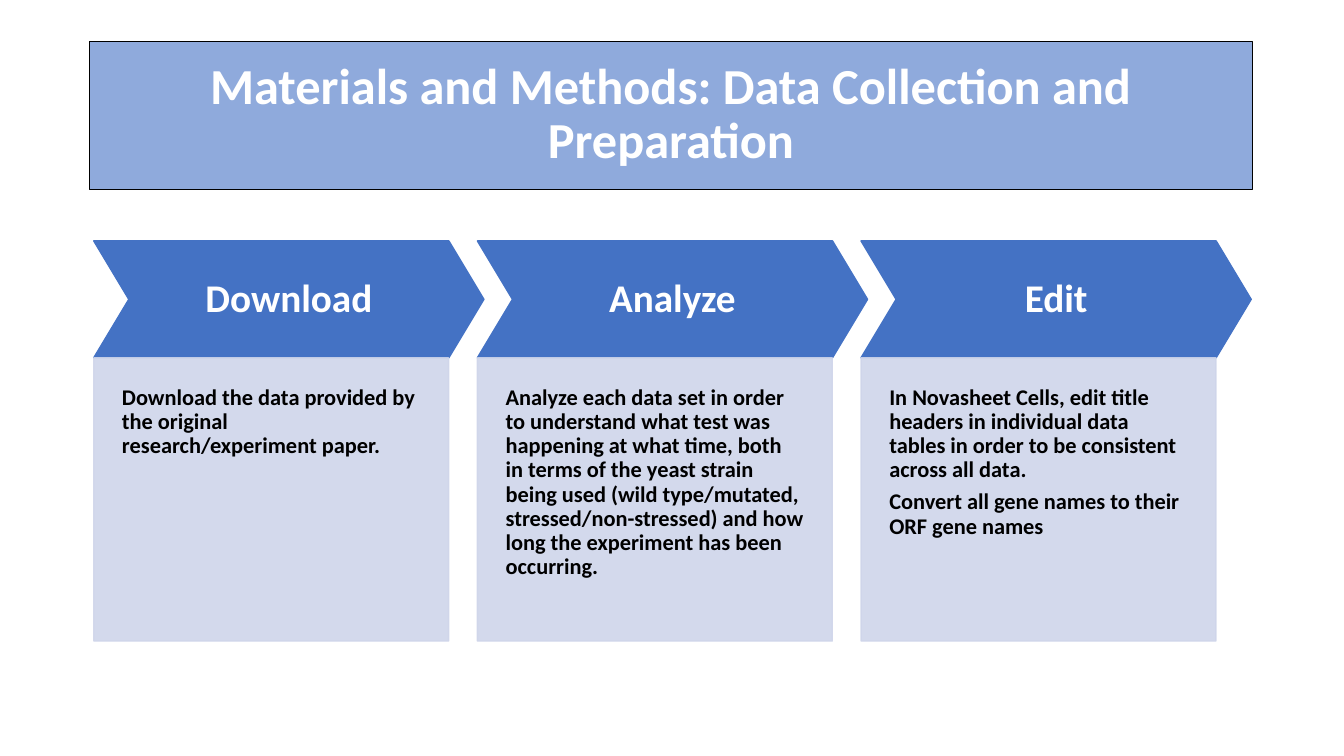
from lxml import etree
from pptx import Presentation
from pptx.dml.color import RGBColor
from pptx.enum.shapes import MSO_SHAPE
from pptx.enum.text import MSO_ANCHOR, PP_ALIGN
from pptx.oxml.ns import qn
from pptx.util import Inches, Pt

RECT, CHEVRON = MSO_SHAPE.RECTANGLE, MSO_SHAPE.CHEVRON
LEFT, CENTER = PP_ALIGN.LEFT, PP_ALIGN.CENTER
TOP, MIDDLE = MSO_ANCHOR.TOP, MSO_ANCHOR.MIDDLE

FONT = "Calibri"
STEP_LEFT, STEP_PITCH = 0.93, 3.805
CHEVRON_TOP, CHEVRON_W, CHEVRON_H = 2.39, 3.87, 1.16
PANEL_W, PANEL_H = 3.52, 2.81

STEPS = [
    ("Download",
     ["Download the data provided by the original research/experiment paper."]),
    ("Analyze",
     ["Analyze each data set in order to understand what test was happening at "
      "what time, both in terms of the yeast strain being used (wild "
      "type/mutated, stressed/non-stressed) and how long the experiment has "
      "been occurring."]),
    ("Edit",
     ["In Novasheet Cells, edit title headers in individual data tables in "
      "order to be consistent across all data.",
      "Convert all gene names to their ORF gene names"]),
]


def rgb(color):
    return RGBColor.from_string(color)


def add_box(s, kind, box, fill, line, width):
    sp = s.shapes.add_shape(kind, *map(Inches, box))
    sp.shadow.inherit = False
    sp.fill.solid()
    sp.fill.fore_color.rgb = rgb(fill)
    sp.line.color.rgb = rgb(line)
    sp.line.width = Pt(width)
    return sp


def set_opacity(sp, percent):
    """Apply one opacity to both the fill and the outline."""
    for clr in sp._element.spPr.iter(qn("a:srgbClr")):
        etree.SubElement(clr, qn("a:alpha"), val=str(percent * 1000))


def write_text(sp, lines, size, color, align, anchor, margins, after=0):
    """Fill a shape with bold paragraphs; margins run left, top, right, bottom."""
    tf = sp.text_frame
    tf.word_wrap = True
    tf.vertical_anchor = anchor
    for side, margin in zip(("left", "top", "right", "bottom"), margins):
        setattr(tf, f"margin_{side}", Inches(margin))
    for i, line in enumerate(lines):
        p = tf.paragraphs[0] if i == 0 else tf.add_paragraph()
        p.alignment, p.line_spacing, p.space_after = align, 0.9, Pt(after)
        r = p.add_run()
        r.text = line
        for name, value in {"name": FONT, "size": Pt(size), "bold": True}.items():
            setattr(r.font, name, value)
        r.font.color.rgb = rgb(color)


def add_title(s, text):
    sp = add_box(s, RECT, (0.89, 0.41, 11.53, 1.47), "8FAADC", "000000", 0.75)
    write_text(sp, [text], 36, "FFFFFF", CENTER, MIDDLE, (0.1, 0.05, 0.1, 0.05))


def add_step(s, left, heading, lines):
    """Draw a chevron heading with its description panel below."""
    chevron = add_box(s, CHEVRON, (left, CHEVRON_TOP, CHEVRON_W, CHEVRON_H),
                      "4472C4", "4472C4", 1)
    chevron.adjustments[0] = 0.3
    write_text(chevron, [heading], 28, "FFFFFF", CENTER, MIDDLE, [0.14] * 4)

    panel = add_box(s, RECT, (left, CHEVRON_TOP + CHEVRON_H, PANEL_W, PANEL_H),
                    "CFD5EA", "CFD5EA", 1)
    set_opacity(panel, 90)
    write_text(panel, lines, 16, "000000", LEFT, TOP,
               (0.28, 0.28, 0.28, 0.56), after=5.6)


def main():
    prs = Presentation()
    prs.slide_width, prs.slide_height = Inches(13.33), Inches(7.5)
    s = prs.slides.add_slide(prs.slide_layouts[6])
    add_title(s, "Materials and Methods: Data Collection and Preparation")
    for i, (heading, lines) in enumerate(STEPS):
        add_step(s, STEP_LEFT + i * STEP_PITCH, heading, lines)
    prs.save("out.pptx")


if __name__ == "__main__":
    main()
